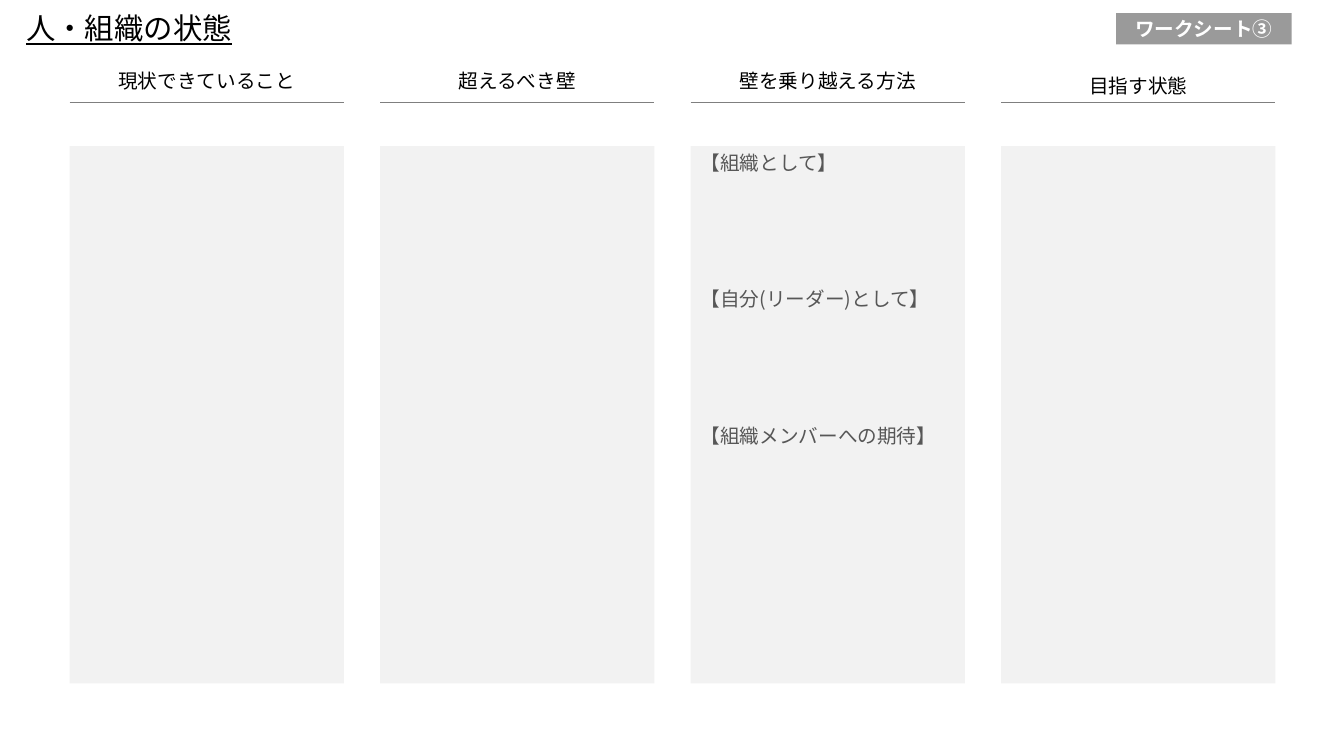
from lxml.etree import SubElement
from pptx import Presentation
from pptx.dml.color import RGBColor
from pptx.enum.shapes import MSO_CONNECTOR, MSO_SHAPE
from pptx.enum.text import MSO_ANCHOR, MSO_AUTO_SIZE, PP_ALIGN
from pptx.oxml.ns import qn
from pptx.util import Inches, Pt

FONT = "Noto Sans CJK JP"
TITLE = "人・組織の状態"
BADGE = "ワークシート③"
# heading, top of heading, prompts in the panel
COLUMNS = [
    ("現状できていること", 0.58, []),
    ("超えるべき壁", 0.58, []),
    ("壁を乗り越える方法", 0.58,
     ["【組織として】", "【自分(リーダー)として】", "【組織メンバーへの期待】"]),
    ("目指す状態", 0.63, []),
]
LEFT, COL_W, GAP = 0.69, 2.72, 0.36
HEAD_H, RULE_Y = 0.44, 1.02
PANEL_Y, PANEL_H = 1.45, 5.33
PROMPT_GAP = 80.5


def rgb(color):
    return RGBColor.from_string(color)


def write(s, *lines, size=14, color="000000", bold=False, underline=False,
          align=PP_ALIGN.LEFT, anchor=MSO_ANCHOR.TOP, inset=0.05, gap=0):
    tf = s.text_frame
    tf.word_wrap = True
    tf.auto_size = MSO_AUTO_SIZE.NONE
    tf.vertical_anchor = anchor
    tf.margin_left = tf.margin_right = Inches(0.1)
    tf.margin_top = tf.margin_bottom = Inches(inset)
    for i, line in enumerate(lines):
        p = tf.add_paragraph() if i else tf.paragraphs[0]
        p.alignment = align
        p.space_before = Pt(gap if i else 0)
        r = p.add_run()
        r.text = line
        f = r.font
        f.size, f.name, f.bold, f.underline = Pt(size), FONT, bold, underline
        f.color.rgb = rgb(color)
        rPr = r._r.get_or_add_rPr()
        rPr.set("lang", "ja-JP")
        SubElement(rPr, qn("a:ea")).set("typeface", FONT)


def add_box(shapes, x, y, w, h, fill):
    s = shapes.add_shape(MSO_SHAPE.RECTANGLE, *map(Inches, (x, y, w, h)))
    s.shadow.inherit = False
    s.fill.solid()
    s.fill.fore_color.rgb = rgb(fill)
    s.line.fill.background()
    return s


def add_rule(shapes, x, y, w):
    s = shapes.add_connector(MSO_CONNECTOR.STRAIGHT,
                             *map(Inches, (x, y, x + w, y)))
    s.line.color.rgb = rgb("7F7F7F")
    s.line.width = Pt(0.75)
    SubElement(s._element.spPr, qn("a:effectLst"))


def main():
    prs = Presentation()
    prs.slide_width, prs.slide_height = Inches(13.33), Inches(7.5)
    slide = prs.slides.add_slide(prs.slide_layouts[5])
    shapes = slide.shapes

    title = shapes.title
    title.left, title.top, title.width, title.height = map(
        Inches, (0.16, 0, 3.25, 0.56))
    write(title, TITLE, size=21, underline=True, inset=0.1)

    badge = add_box(shapes, 11.07, 0.13, 1.74, 0.31, "9A9A9A")
    write(badge, BADGE, color="FFFFFF", bold=True,
          align=PP_ALIGN.CENTER, anchor=MSO_ANCHOR.MIDDLE)

    for i, (heading, head_y, prompts) in enumerate(COLUMNS):
        x = LEFT + i * (COL_W + GAP)
        head = shapes.add_textbox(*map(Inches, (x, head_y, COL_W, HEAD_H)))
        write(head, heading, align=PP_ALIGN.CENTER, inset=0.1)
        add_rule(shapes, x, RULE_Y, COL_W)
        panel = add_box(shapes, x, PANEL_Y, COL_W, PANEL_H, "F2F2F2")
        write(panel, *prompts, color="575757", gap=PROMPT_GAP)

    prs.save("out.pptx")


if __name__ == "__main__":
    main()
